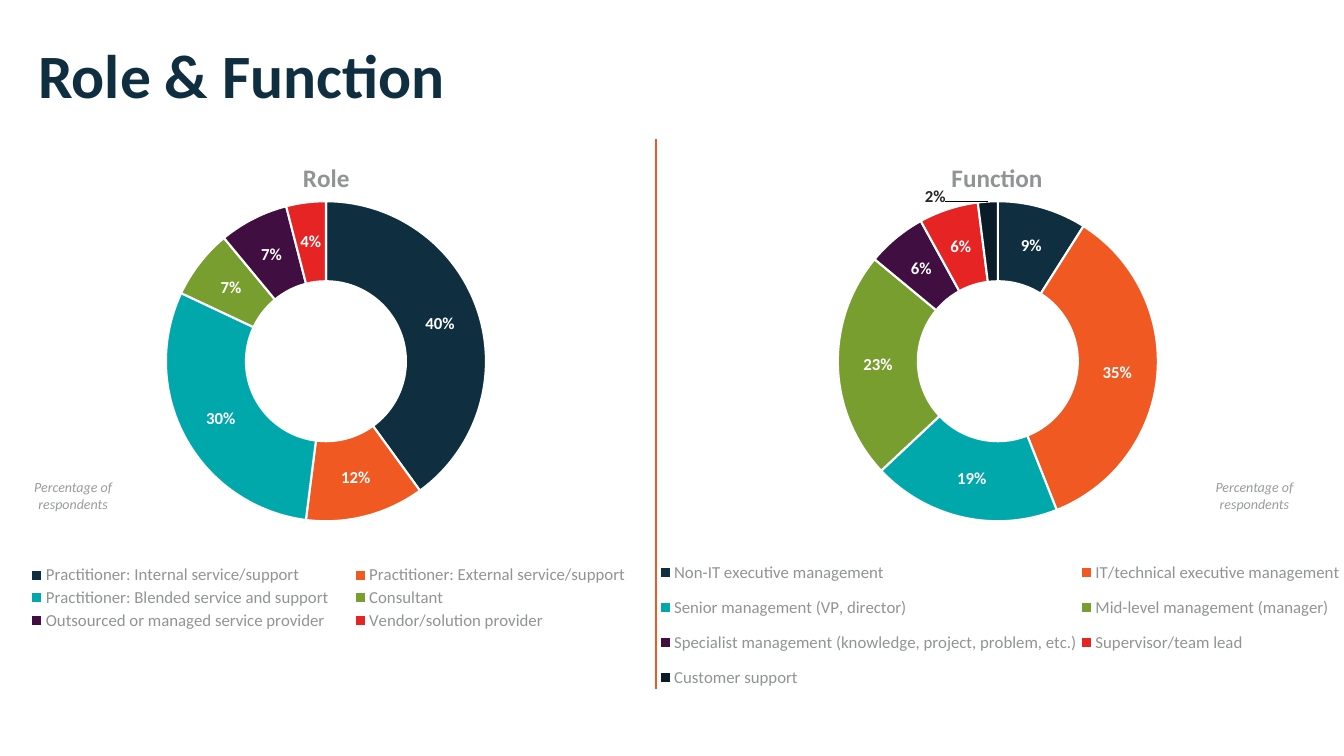
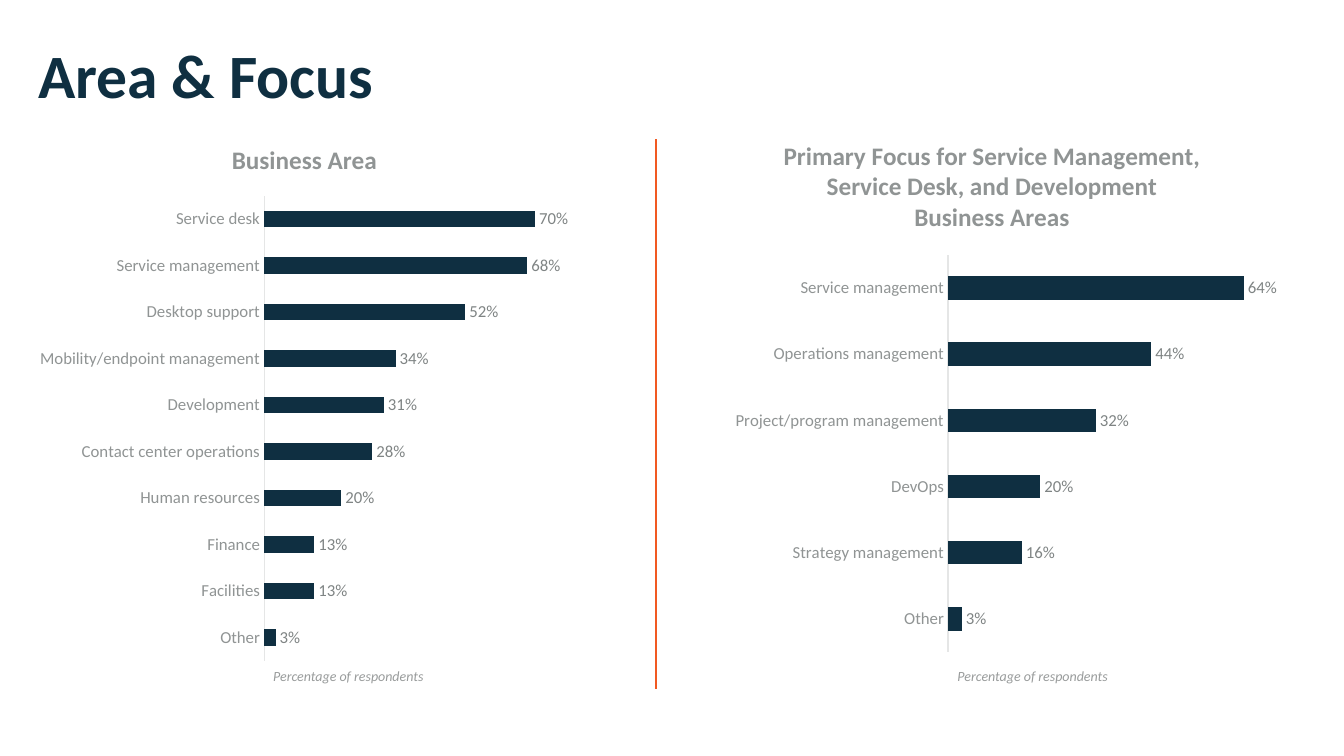
from pptx import Presentation
from pptx.chart.data import CategoryChartData
from pptx.dml.color import RGBColor
from pptx.enum.chart import (XL_CHART_TYPE, XL_LABEL_POSITION,
                             XL_LEGEND_POSITION, XL_TICK_MARK)
from pptx.enum.shapes import MSO_CONNECTOR
from pptx.enum.text import MSO_ANCHOR, PP_ALIGN
from pptx.oxml import parse_xml
from pptx.oxml.ns import nsdecls, qn
from pptx.util import Pt

RING = XL_CHART_TYPE.DOUGHNUT
BAR = XL_CHART_TYPE.BAR_CLUSTERED
OUTER = XL_LABEL_POSITION.OUTSIDE_END
BOTTOM = XL_LEGEND_POSITION.BOTTOM
NO_TICK = XL_TICK_MARK.NONE
STRAIGHT = MSO_CONNECTOR.STRAIGHT
MIDDLE = MSO_ANCHOR.MIDDLE
CENTER = PP_ALIGN.CENTER

FONT = "Calibri"
NAVY = RGBColor(0x0F, 0x2F, 0x41)
ORANGE = RGBColor(0xF1, 0x59, 0x22)
TEAL = RGBColor(0x00, 0xA8, 0xAC)
GREEN = RGBColor(0x79, 0x9E, 0x30)
PLUM = RGBColor(0x40, 0x0E, 0x40)
RED = RGBColor(0xE7, 0x24, 0x24)
INK = RGBColor(0x09, 0x1C, 0x27)
WHITE = RGBColor(0xFF, 0xFF, 0xFF)
DARK = RGBColor(0x26, 0x26, 0x26)
TEXT = RGBColor(0x56, 0x59, 0x59)
GRAY = RGBColor(0x90, 0x94, 0x94)
VALUE = RGBColor(0x7F, 0x84, 0x84)
SOFT = RGBColor(0x99, 0x9C, 0x9C)
RULE = RGBColor(0xE5, 0xE6, 0xE6)
SLICES = [NAVY, ORANGE, TEAL, GREEN, PLUM, RED, INK]

# Content: boxes in points; plot, head and legend are shares of the chart
NOTE = "Percentage of respondents"
HEAD_TOP = 0.03
RING_PLOT = (0.224, 0.11, 0.546, 0.567)

RINGS = [
    {"title": "Role", "box": (0, 99.4, 468.5, 403.2), "head": 0.455,
     "legend": (0.017, 0.75, 0.968, 0.125),
     "data": [("Practitioner: Internal service/support", 0.4),
              ("Practitioner: External service/support", 0.12),
              ("Practitioner: Blended service and support", 0.3),
              ("Consultant", 0.07),
              ("Outsourced or managed service provider", 0.07),
              ("Vendor/solution provider", 0.04)]},
    {"title": "Function", "box": (468.5, 99.4, 491.5, 403.2), "head": 0.423,
     "legend": (0, 0.723, 1, 0.275), "moved": (6, -0.08, -0.08),
     "data": [("Non-IT executive management", 0.09),
              ("IT/technical executive management", 0.35),
              ("Senior management (VP, director)", 0.19),
              ("Mid-level management (manager)", 0.23),
              ("Specialist management (knowledge, project, problem, etc.)",
               0.06),
              ("Supervisor/team lead", 0.06),
              ("Customer support", 0.02)]},
]
BARS = [
    {"title": "Business Area", "box": (20.9, 86.4, 397.4, 393.8),
     "head": 0.356, "plot": (0.422, 0.136, 0.557, 0.843), "max": 0.8,
     "data": [("Service desk", 0.7), ("Service management", 0.68),
              ("Desktop support", 0.52),
              ("Mobility/endpoint management", 0.34),
              ("Development", 0.31), ("Contact center operations", 0.28),
              ("Human resources", 0.2), ("Finance", 0.13),
              ("Facilities", 0.13), ("Other", 0.03)]},
    {"title": "Primary Focus for Service Management,\n"
              "Service Desk, and Development\nBusiness Areas",
     "box": (517, 85.7, 397.4, 387.4),
     "head": 0.102, "plot": (0.403, 0.249, 0.582, 0.732), "max": 0.7,
     "data": [("Service management", 0.64), ("Operations management", 0.44),
              ("Project/program management", 0.32), ("DevOps", 0.2),
              ("Strategy management", 0.16), ("Other", 0.03)]},
]
SLIDES = [
    ("Role & Function", RINGS,
     [(0, 338.4, 104.4, 31.7), (843.8, 338.4, 104.4, 31.7)]),
    ("Area & Focus", BARS,
     [(117.4, 473, 262.8, 19.4), (606.2, 473, 262.8, 19.4)]),
]


def style(font, size, color, bold=False, italic=False):
    font.name, font.size = FONT, Pt(size)
    font.bold, font.italic = bold, italic
    font.color.rgb = color


def points(box):
    return [Pt(n) for n in box]


def add_text(slide, box, text):
    frame = slide.shapes.add_textbox(*points(box)).text_frame
    frame.word_wrap = True
    frame.text = text
    return frame, frame.paragraphs[0]


def place(part, index, nums, inner=False, edge=True):
    """Give a chart part a manual layout, as its child at index."""
    for old in part.findall(qn("c:layout")):
        part.remove(old)
    tags = '<c:layoutTarget val="inner"/>' if inner else ""
    if edge:
        tags += '<c:xMode val="edge"/><c:yMode val="edge"/>'
    for tag, num in zip("xywh", nums):
        tags += f'<c:{tag} val="{num}"/>'
    part.insert(index, parse_xml(
        f'<c:layout {nsdecls("c")}><c:manualLayout>{tags}'
        '</c:manualLayout></c:layout>'))


def add_chart(slide, kind, item, plot):
    data = CategoryChartData(number_format="0%")
    data.categories = [name for name, _ in item["data"]]
    data.add_series("Series 1", [num for _, num in item["data"]])
    chart = slide.shapes.add_chart(kind, *points(item["box"]), data).chart
    style(chart.font, 10, TEXT)
    # Heading
    chart.has_title = True
    frame = chart.chart_title.text_frame
    frame.text = item["title"]
    for para in frame.paragraphs:
        style(para.font, 18, GRAY, bold=True)
    title = chart.chart_title._element
    place(title, 1, (item["head"], HEAD_TOP))
    # Plot area and value labels
    place(chart._chartSpace.chart.plotArea, 0, plot, inner=True)
    series = chart.plots[0].series[0]
    labels = series.data_labels
    labels.show_value = True
    labels.number_format = "0%"
    labels.number_format_is_linked = False
    return chart, series, labels


def add_ring(slide, item):
    chart, series, labels = add_chart(slide, RING, item, RING_PLOT)
    chart.plots[0].vary_by_categories = True
    style(labels.font, 12, WHITE, bold=True)
    for i, color in zip(range(len(item["data"])), SLICES):
        shape = series.points[i].format
        shape.fill.solid()
        shape.fill.fore_color.rgb = color
        shape.line.color.rgb = WHITE
        shape.line.width = Pt(1.5)
    # Label pulled out of a thin slice
    if "moved" in item:
        i, *shift = item["moved"]
        style(series.points[i].data_label.font, 12, DARK, bold=True)
        tag = labels._element.find(qn("c:dLbl"))
        place(tag, 1, shift, edge=False)
    # Legend
    chart.has_legend = True
    legend = chart.legend
    legend.position = BOTTOM
    legend.include_in_layout = False
    style(legend.font, 12, GRAY)
    place(legend._element, 1, item["legend"])


def add_bars(slide, item):
    chart, series, labels = add_chart(slide, BAR, item, item["plot"])
    chart.has_legend = False
    chart.plots[0].vary_by_categories = False
    chart.plots[0].gap_width = 182
    series.format.fill.solid()
    series.format.fill.fore_color.rgb = NAVY
    labels.position = OUTER
    style(labels.font, 12, VALUE)
    # Axes
    cats, vals = chart.category_axis, chart.value_axis
    cats.reverse_order = True
    cats.major_tick_mark = cats.minor_tick_mark = NO_TICK
    cats.format.line.color.rgb = RULE
    cats.format.line.width = Pt(0.75)
    style(cats.tick_labels.font, 12, GRAY)
    vals.minimum_scale, vals.maximum_scale = 0, item["max"]
    vals.has_major_gridlines = False
    vals.visible = False


def add_base(deck, title):
    """Blank slide with the shared title and divider."""
    slide = deck.slides.add_slide(deck.slide_layouts[6])
    frame, para = add_text(slide, (20.2, 26.6, 870.5, 59), title)
    frame.vertical_anchor = MIDDLE
    para.line_spacing = 0.9
    style(para.font, 44, NAVY, bold=True)
    ends = points((468.5, 99.4, 468.5, 492.5))
    line = slide.shapes.add_connector(STRAIGHT, *ends)
    line.line.color.rgb = ORANGE
    line.line.width = Pt(1.5)
    line._element.spPr.append(parse_xml(f'<a:effectLst {nsdecls("a")}/>'))
    return slide


def main():
    deck = Presentation()
    deck.slide_width, deck.slide_height = Pt(960), Pt(540)
    for title, items, notes in SLIDES:
        slide = add_base(deck, title)
        draw = add_ring if items is RINGS else add_bars
        for item in items:
            draw(slide, item)
        for box in notes:
            _, para = add_text(slide, box, NOTE)
            para.alignment = CENTER
            style(para.font, 10, SOFT, italic=True)
    deck.save("out.pptx")


if __name__ == "__main__":
    main()
